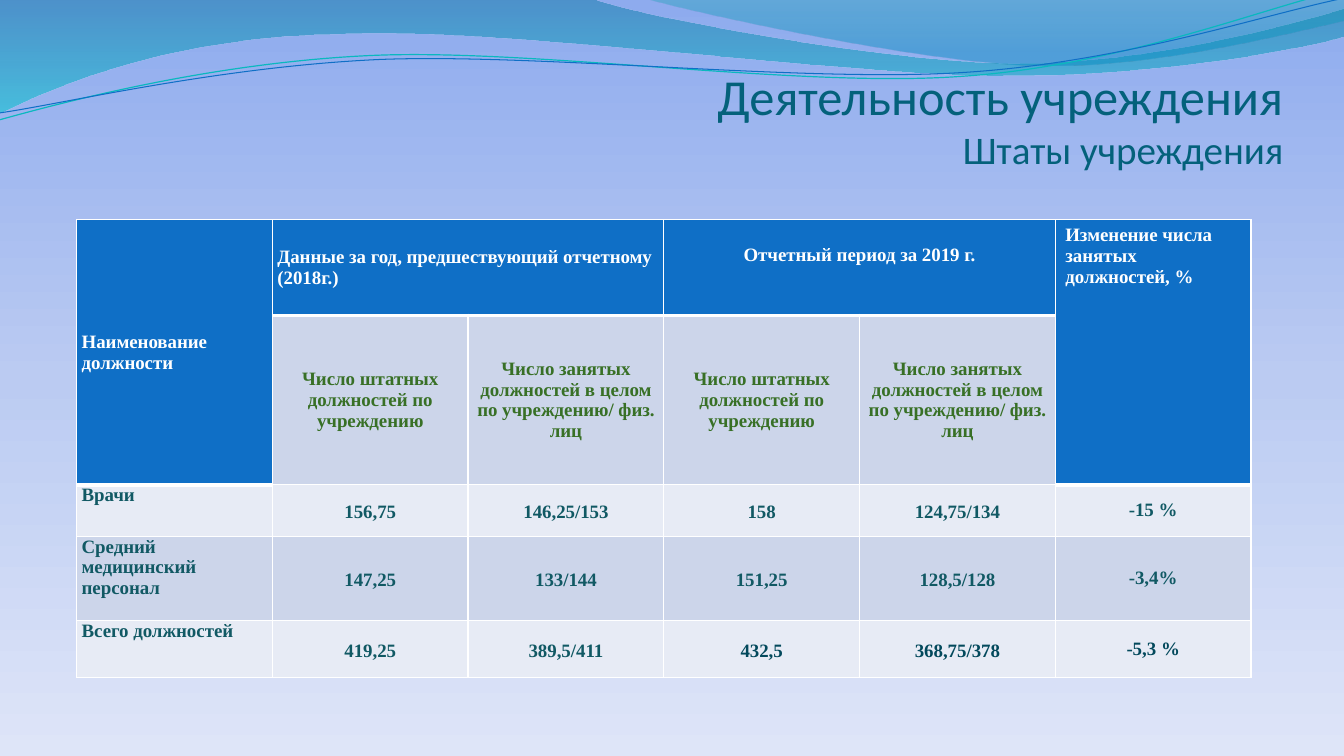
from dataclasses import dataclass

from lxml.etree import SubElement
from pptx import Presentation
from pptx.dml.color import RGBColor
from pptx.enum.text import MSO_ANCHOR as Anchor, MSO_AUTO_SIZE as AutoSize, PP_ALIGN as Align
from pptx.oxml.ns import qn
from pptx.util import Inches, Pt


@dataclass(frozen=True)
class Theme:
    title_font: str = "Calibri"
    table_font: str = "Times New Roman"
    title_size: float = 36
    subtitle_size: float = 27.9
    table_size: float = 13.5
    title: str = "04617B"
    header: str = "0F6FC6"
    white: str = "FFFFFF"
    subheader: str = "387026"
    body: str = "115964"
    total: str = "03495C"
    dark_band: str = "CCD5EA"
    light_band: str = "E7EBF5"
    teal_line: str = "0AB8BF"
    background: tuple = ((0, "8EABEE", 100), (50, "BBCBF2", 100), (100, "DEE5F8", 100))
    left_wave: tuple = ((0, "0074A1", 45), (100, "00C6CF", 55))
    right_wave: tuple = ((0, "00A1A9", 30), (80, "008BBF", 45))


THEME = Theme()
TABLE_WIDTH = 11.65
ROW_HEIGHTS = (0.95, 1.68, 0.51, 0.84, 0.56)
STAFF_HEADING = "Число штатных должностей по учреждению"
FILLED_HEADING = "Число занятых должностей в целом по учреждению/ физ. лиц"
ROWS = (
    ("Наименование должности", "Данные за год, предшествующий отчетному (2018г.)", "",
     "Отчетный период за 2019 г.", "", "Изменение числа занятых должностей, %"),
    ("", STAFF_HEADING, FILLED_HEADING, STAFF_HEADING, FILLED_HEADING, ""),
    ("Врачи", "156,75", "146,25/153", "158", "124,75/134", "-15 %"),
    ("Средний медицинский персонал", "147,25", "133/144", "151,25", "128,5/128", "-3,4%"),
    ("Всего должностей", "419,25", "389,5/411", "432,5", "368,75/378", "-5,3 %"),
)
MERGES = ((0, 0, 1, 0), (0, 1, 0, 2), (0, 3, 0, 4), (0, 5, 1, 5))
LAST_COLUMN = len(ROWS[0]) - 1

LEFT_WAVE = ((0, 0), (5.87, -0.01), (6.34, 0.17, 8.85, 0.63, 10.11, 0.63),
             (11.38, 0.63, 12.78, 0.26, 13.33, 0.09), (13.35, 0.36),
             (13.11, 0.44, 11.6, 0.76, 9.94, 0.75), (8.29, 0.75, 5.09, 0.28, 3.43, 0.34),
             (1.72, 0.36, 0.61, 0.83, -0.01, 1.13))
RIGHT_WAVE = ((6.39, -0.01), (6.79, 0.11, 9.09, 0.62, 10.25, 0.65),
              (11.41, 0.69, 12.82, 0.32, 13.33, 0.21), (13.33, 0))
TEAL_CURVE = ((-0.01, 1.19), (0.64, 1.01, 2.11, 0.62, 3.69, 0.55),
              (5.27, 0.48, 7.9, 0.87, 9.5, 0.76), (11.1, 0.66, 12.52, 0.08, 13.31, -0.1))
BLUE_CURVE = ((0, 1.12), (0.63, 1.03, 2.18, 0.66, 3.78, 0.59),
              (5.37, 0.53, 7.96, 0.82, 9.55, 0.72), (11.15, 0.62, 12.55, 0.14, 13.34, -0.02))


def rgb(color):
    return RGBColor.from_string(color)


def paint_gradient(fill, element, stops):
    fill.gradient()
    fill.gradient_angle = 270
    stop_list = next(element.iter(qn("a:gsLst")))
    stop_list.clear()
    for position, color, opacity in stops:
        stop = SubElement(stop_list, qn("a:gs"), pos=str(position * 1000))
        paint = SubElement(stop, qn("a:srgbClr"), val=color)
        if opacity < 100:
            SubElement(paint, qn("a:alpha"), val=str(opacity * 1000))


def add_outline(slide, left, top, segments, closed):
    points = [(Inches(left + segment[-2]), Inches(top + segment[-1])) for segment in segments]
    builder = slide.shapes.build_freeform(*points[0])
    builder.add_line_segments(points[1:], close=closed)
    shape = builder.convert_to_shape()
    shape.shadow.inherit = False
    pieces = list(shape.element.iter(qn("a:lnTo")))
    for piece, segment in zip(pieces, segments[1:]):
        if len(segment) == 6:
            piece.tag = qn("a:cubicBezTo")
            for index in (0, 2):
                point = piece.makeelement(qn("a:pt"), {
                    "x": str(Inches(left + segment[index]) - shape.left),
                    "y": str(Inches(top + segment[index + 1]) - shape.top)})
                piece.insert(index // 2, point)
    return shape


def add_waves(slide, left, top):
    for segments, stops in ((LEFT_WAVE, THEME.left_wave), (RIGHT_WAVE, THEME.right_wave)):
        wave = add_outline(slide, left, top, segments, True)
        paint_gradient(wave.fill, wave.element, stops)
        wave.line.fill.background()
    for segments, color, width in ((TEAL_CURVE, THEME.teal_line, 0.85),
                                   (BLUE_CURVE, THEME.header, 0.75)):
        curve = add_outline(slide, left, top, segments, False)
        curve.fill.background()
        curve.line.color.rgb = rgb(color)
        curve.line.width = Pt(width)


def format_title(slide, left, top, width, height):
    title = slide.shapes.title
    title.left, title.top = Inches(left), Inches(top)
    title.width, title.height = Inches(width), Inches(height)
    frame = title.text_frame
    frame.word_wrap = True
    frame.auto_size = AutoSize.NONE
    frame.vertical_anchor = Anchor.BOTTOM
    frame.margin_left = frame.margin_right = frame.margin_bottom = 0
    paragraph = frame.paragraphs[0]
    paragraph.text = "Деятельность учреждения\vШтаты учреждения"
    paragraph.alignment = Align.RIGHT
    paragraph.space_before = Pt(0)
    paragraph.font.name = THEME.title_font
    paragraph.font.color.rgb = rgb(THEME.title)
    for run, size in zip(paragraph.runs, (THEME.title_size, THEME.subtitle_size)):
        run.font.size = Pt(size)


def is_header(row, column):
    return row == 0 or row == 1 and column in (0, LAST_COLUMN)


def cell_colors(row, column):
    if is_header(row, column):
        return THEME.header, THEME.white
    band = THEME.dark_band if row % 2 else THEME.light_band
    if row == 1:
        return band, THEME.subheader
    is_late_total = row == len(ROWS) - 1 and column >= 3
    return band, THEME.total if is_late_total else THEME.body


def add_borders(cell, top, bottom):
    properties = cell._tc.get_or_add_tcPr()
    for side, width in (("L", 1), ("R", 1), ("T", top), ("B", bottom)):
        line = SubElement(properties, qn(f"a:ln{side}"), w=str(Pt(width)))
        fill = SubElement(line, qn("a:solidFill"))
        SubElement(fill, qn("a:srgbClr"), val=THEME.white)


def format_cell(cell, row, column):
    fill, color = cell_colors(row, column)
    cell.text = ROWS[row][column]
    add_borders(cell, 3 if row and is_header(row - 1, column) else 1,
                3 if is_header(row, column) else 1)
    cell.fill.solid()
    cell.fill.fore_color.rgb = rgb(fill)
    if row == 0 and column >= 3:
        cell.vertical_anchor = Anchor.TOP
        cell.margin_top = Inches(0.25 if column == 3 else 0.05)
    else:
        cell.margin_left = cell.margin_right = Inches(0.05)
        cell.margin_top = cell.margin_bottom = 0
        cell.vertical_anchor = Anchor.TOP if row > 1 and column == 0 else Anchor.MIDDLE
    paragraph = cell.text_frame.paragraphs[0]
    is_centred = column == 3 or row > 0 and column > 0
    paragraph.alignment = Align.CENTER if is_centred else Align.LEFT
    if row > 1 and 0 < column < LAST_COLUMN:
        paragraph.line_spacing = 1.15
    paragraph.font.name = THEME.table_font
    paragraph.font.size = Pt(THEME.table_size)
    paragraph.font.bold = True
    paragraph.font.color.rgb = rgb(color)


def add_staff_table(slide, left, top, width):
    table = slide.shapes.add_table(
        len(ROWS), len(ROWS[0]), Inches(left), Inches(top),
        Inches(width), Inches(sum(ROW_HEIGHTS))).table
    table.first_row = table.horz_banding = False
    for column in table.columns:
        column.width = Inches(width / len(ROWS[0]))
    for row, height in zip(table.rows, ROW_HEIGHTS):
        row.height = Inches(height)
    for row in range(len(ROWS)):
        for column in range(len(ROWS[0])):
            format_cell(table.cell(row, column), row, column)
    for first_row, first_column, last_row, last_column in MERGES:
        table.cell(first_row, first_column).merge(table.cell(last_row, last_column))


def main():
    presentation = Presentation()
    presentation.slide_width, presentation.slide_height = Inches(13.33), Inches(7.5)
    slide = presentation.slides.add_slide(presentation.slide_layouts[5])
    paint_gradient(slide.background.fill, slide.element, THEME.background)
    add_waves(slide, 0, 0)
    format_title(slide, 0.73, 0.29, 12, 1.42)
    add_staff_table(slide, 0.76, 2.18, TABLE_WIDTH)
    presentation.save("out.pptx")


if __name__ == "__main__":
    main()
